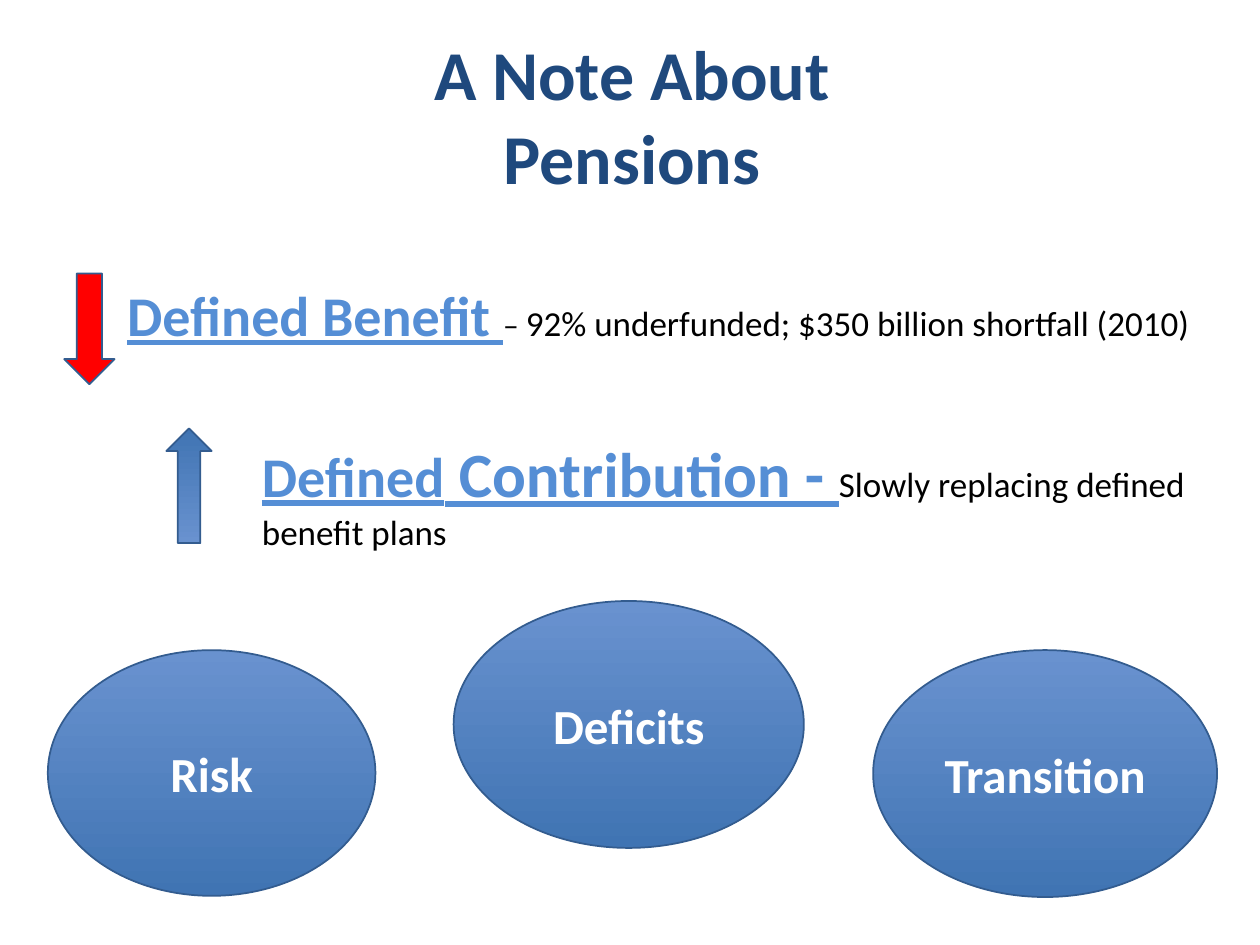
from pptx import Presentation
from pptx.dml.color import RGBColor
from pptx.enum.shapes import MSO_SHAPE
from pptx.enum.text import MSO_ANCHOR, PP_ALIGN
from pptx.util import Inches, Pt

ARROW, OVAL = MSO_SHAPE.DOWN_ARROW, MSO_SHAPE.OVAL
CENTER, LEFT = PP_ALIGN.CENTER, PP_ALIGN.LEFT
MIDDLE = MSO_ANCHOR.MIDDLE

NAVY, SKY, BLACK, WHITE, RED = "1F497D", "558ED5", "000000", "FFFFFF", "FF0000"
OUTLINE = "335C8F"
BLUES = ("6992CF", "4074B3")

deck = Presentation()
deck.slide_width, deck.slide_height = Inches(10), Inches(7.5)
page = deck.slides.add_slide(deck.slide_layouts[6])

# The grid has 100 columns and 75 rows.
COLUMN = deck.slide_width / 100
ROW = deck.slide_height / 75


def grid(left, top, width, height):
    """Turn columns and rows into slide lengths."""
    return [round(left * COLUMN), round(top * ROW),
            round(width * COLUMN), round(height * ROW)]


def set_font(font, size, color, bold):
    font.name, font.size, font.bold = "Calibri", Pt(size), bold
    font.color.rgb = RGBColor.from_string(color)


# Each span: text, size, color, whether it is a heading (bold), underlined
texts = [
    ((26.9, 1.9, 46.5, 14.5), CENTER,
     [("A Note About Pensions", 40, NAVY, True, False)]),
    ((9.1, 21.8, 87.5, 6.4), LEFT,
     [("Defined Benefit ", 32, SKY, True, True),
      ("– ", 18, BLACK, False, False),
      ("92% underfunded; $350 billion shortfall (2010)", 20, BLACK, False, False)]),
    ((19.8, 34, 76.9, 10.4), LEFT,
     [("Defined", 32, SKY, True, True),
      (" Contribution - ", 36, SKY, True, True),
      ("Slowly replacing defined benefit plans", 20, BLACK, False, False)]),
]
for area, alignment, spans in texts:
    box = page.shapes.add_textbox(*grid(*area))
    box.text_frame.word_wrap = True
    para = box.text_frame.paragraphs[0]
    para.alignment = alignment
    for text, size, color, bold, underlined in spans:
        span = para.add_run()
        span.text = text
        set_font(span.font, size, color, bold)
        span.font.underline = underlined

# Each shape: kind, area, rotation, label, solid color (None for the gradient)
shapes = [
    (ARROW, (5.1, 21.7, 4, 8.8), 0, "", RED),
    (ARROW, (13.2, 34, 3.6, 9.1), 180, "", None),
    (OVAL, (3.8, 51.6, 26, 19.5), 0, "Risk", None),
    (OVAL, (36, 47.7, 27.8, 19.6), 0, "Deficits", None),
    (OVAL, (69.3, 51.6, 27.3, 19.6), 0, "Transition", None),
]
for kind, area, rotation, label, color in shapes:
    shape = page.shapes.add_shape(kind, *grid(*area))
    shape.rotation = rotation
    shape.shadow.inherit = False
    shape.line.color.rgb = RGBColor.from_string(OUTLINE)
    shape.line.width = Pt(1)
    if color:
        shape.fill.solid()
        shape.fill.fore_color.rgb = RGBColor.from_string(color)
    else:
        shape.fill.gradient()
        shape.fill.gradient_angle = 270  # counter-clockwise: top to bottom
        for stop, blue, position in zip(shape.fill.gradient_stops, BLUES, (0, 1)):
            stop.color.rgb = RGBColor.from_string(blue)
            stop.position = position
    if label:
        shape.text_frame.text = label
        shape.text_frame.vertical_anchor = MIDDLE
        para = shape.text_frame.paragraphs[0]
        para.alignment = CENTER
        set_font(para.font, 28, WHITE, True)

deck.save("out.pptx")
